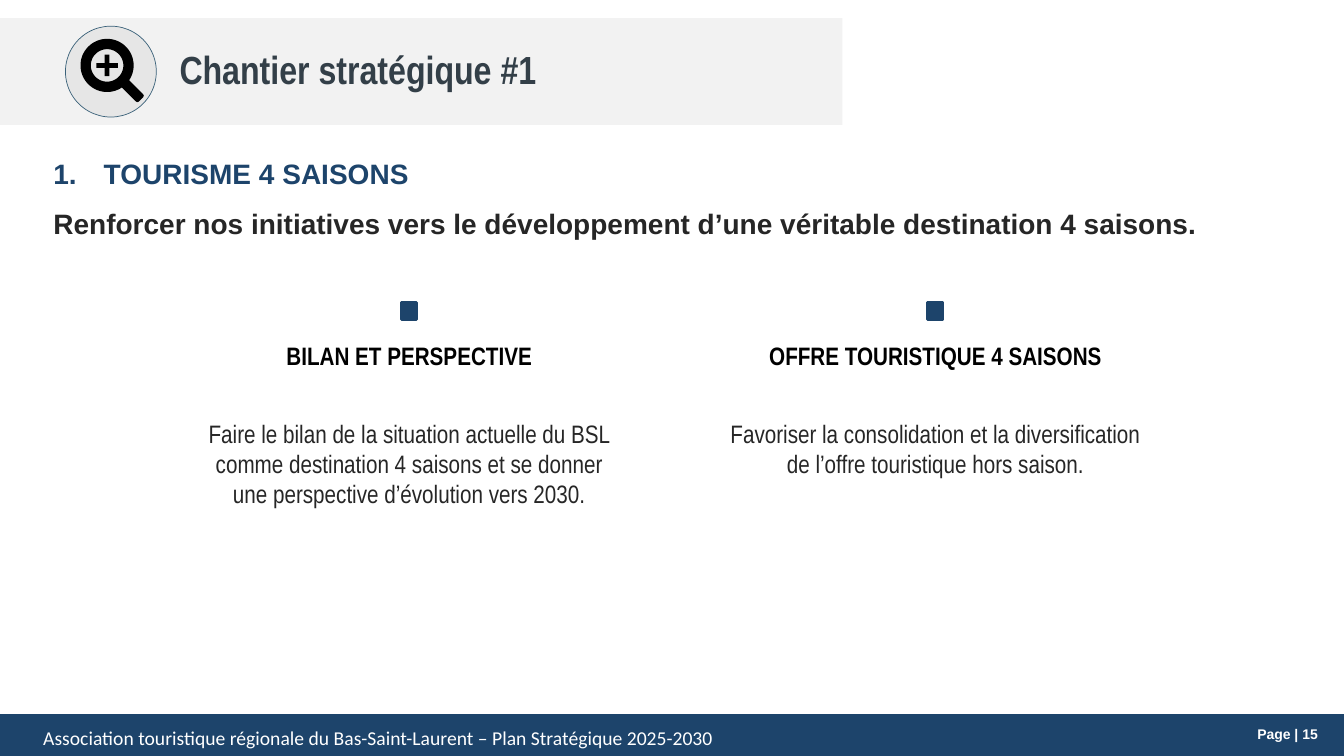
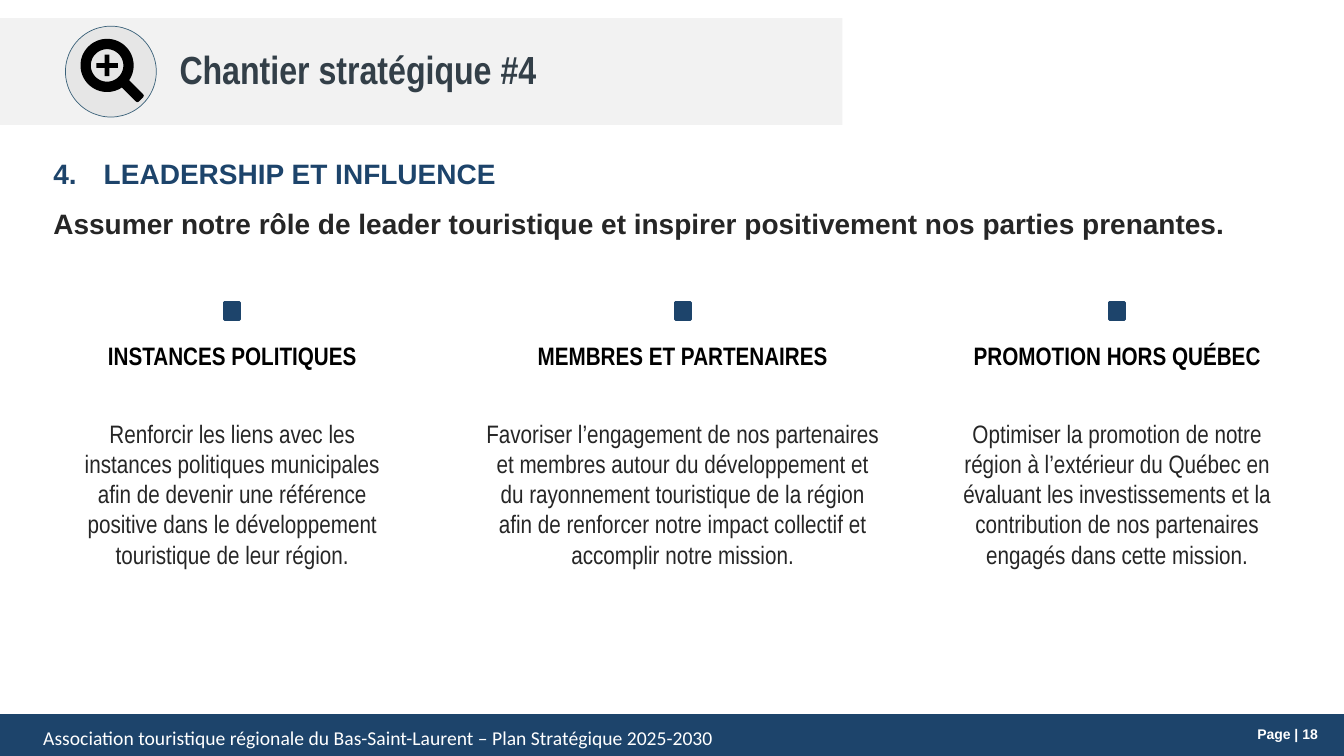
import dataclasses
import math

import lxml.etree
import pptx
import pptx.dml.color
import pptx.enum.shapes
import pptx.enum.text
import pptx.oxml.ns
import pptx.util

Cm = pptx.util.Cm
Pt = pptx.util.Pt
ALIGN = pptx.enum.text.PP_ALIGN
ANCHOR = pptx.enum.text.MSO_ANCHOR
SHAPE = pptx.enum.shapes.MSO_SHAPE


@dataclasses.dataclass(frozen=True)
class TextStyle:
    font: str
    size: float
    color: str
    bold: bool = False


@dataclasses.dataclass(frozen=True)
class Theme:
    navy: str = "1D446B"
    band: str = "F2F2F2"
    disc: str = "E6E6E6"
    disc_line: str = "3A6179"
    icon: str = "000000"
    title: TextStyle = TextStyle("Arial Narrow", 28, "333F48", True)
    topic: TextStyle = TextStyle("Arial", 20, "1D446B", True)
    statement: TextStyle = TextStyle("Arial", 20, "262626", True)
    heading: TextStyle = TextStyle("Arial Narrow", 18, "000000", True)
    detail: TextStyle = TextStyle("Arial Narrow", 18, "262626")
    footer: TextStyle = TextStyle("Calibri", 14, "FFFFFF")
    page_number: TextStyle = TextStyle("Arial", 10, "FFFFFF", True)


THEME = Theme()
PAGE_WIDTH, PAGE_HEIGHT = 33.87, 19.05
FOOTER = "Association touristique régionale du Bas-Saint-Laurent – Plan Stratégique 2025-2030"

# Each column: left and width in centimetres, heading, detail.
CHANTIERS = [
    dict(
        number=1,
        page_number=15,
        topic="TOURISME 4 SAISONS",
        statement="Renforcer nos initiatives vers le développement d’une véritable destination 4 saisons.",
        columns=[
            (4.88, 10.87, "BILAN ET PERSPECTIVE",
             "Faire le bilan de la situation actuelle du BSL comme destination 4 saisons "
             "et se donner une perspective d’évolution vers 2030."),
            (17.91, 11.33, "OFFRE TOURISTIQUE 4 SAISONS",
             "Favoriser la consolidation et la diversification de l’offre touristique hors saison."),
        ],
    ),
    dict(
        number=4,
        page_number=18,
        topic="LEADERSHIP ET INFLUENCE",
        statement="Assumer notre rôle de leader touristique et inspirer positivement nos parties prenantes.",
        columns=[
            (1.65, 8.41, "INSTANCES POLITIQUES",
             "Renforcir les liens avec les instances politiques municipales afin de devenir "
             "une référence positive dans le développement touristique de leur région."),
            (11.91, 10.59, "MEMBRES ET PARTENAIRES",
             "Favoriser l’engagement de nos partenaires et membres autour du développement "
             "et du rayonnement touristique de la région afin de renforcer notre impact "
             "collectif et accomplir notre mission."),
            (23.95, 8.41, "PROMOTION HORS QUÉBEC",
             "Optimiser la promotion de notre région à l’extérieur du Québec en évaluant "
             "les investissements et la contribution de nos partenaires engagés dans cette mission."),
        ],
    ),
]


def rgb(color):
    return pptx.dml.color.RGBColor.from_string(color)


def paint(shape, fill, line=None, weight=0):
    shape.shadow.inherit = False
    shape.fill.solid()
    shape.fill.fore_color.rgb = rgb(fill)
    if line:
        shape.line.color.rgb = rgb(line)
        shape.line.width = Pt(weight)
    else:
        shape.line.fill.background()


def add_block(page, kind, left, top, width, height, fill, line=None, weight=0):
    block = page.shapes.add_shape(kind, Cm(left), Cm(top), Cm(width), Cm(height))
    paint(block, fill, line, weight)


def place(box, left, top, width, height, anchor=ANCHOR.TOP):
    """Position a text holder and return its wrapped, fixed-size frame."""
    box.left, box.top, box.width, box.height = Cm(left), Cm(top), Cm(width), Cm(height)
    frame = box.text_frame
    frame.word_wrap = True
    frame.auto_size = pptx.enum.text.MSO_AUTO_SIZE.NONE
    frame.vertical_anchor = anchor
    return frame


def add_box(page, left, top, width, height):
    return place(page.shapes.add_textbox(0, 0, 0, 0), left, top, width, height)


def write(para, text, style, align=ALIGN.LEFT, before=0, after=0):
    para.alignment = align
    para.space_before, para.space_after = Pt(before), Pt(after)
    span = para.add_run()
    span.text = text
    span.font.name = style.font
    span.font.size = Pt(style.size)
    span.font.bold = style.bold
    span.font.color.rgb = rgb(style.color)


def set_bullet(para, hanging, tag, **attributes):
    properties = para._p.get_or_add_pPr()
    properties.set("marL", str(Cm(hanging)))
    properties.set("indent", str(-Cm(hanging)))
    lxml.etree.SubElement(properties, pptx.oxml.ns.qn(tag), attributes)


def arc(radius, start, end, steps=60):
    angles = [math.radians(start + (end - start) * step / steps) for step in range(steps + 1)]
    return [(radius * math.cos(angle), radius * math.sin(angle)) for angle in angles]


def add_magnifier(page, center_x, center_y):
    """Ring, handle and plus sign as one outline with a hole."""
    outer, inner, grip, arm, bar = 0.67, 0.41, 0.13, 0.27, 0.06
    joint = math.degrees(math.asin(grip / outer))
    half_tip = [(1.14, grip), (1.19, 0.12), (1.21, 0.08)]
    tip = [(x, -y) for x, y in half_tip] + half_tip[::-1]
    turn = math.sqrt(0.5)
    handle = [((x - y) * turn, (x + y) * turn) for x, y in tip]
    rim = arc(outer, 45 + joint, 405 - joint)
    corner = [(arm, -bar), (arm, bar), (bar, bar)]
    plus = []
    for _ in range(4):
        plus += corner
        corner = [(-y, x) for x, y in corner]
    contours = [
        [(Cm(center_x + x), Cm(center_y + y)) for x, y in outline]
        for outline in (rim + handle, arc(inner, 360, 0), plus)
    ]
    builder = page.shapes.build_freeform(*contours[0][0])
    builder.add_line_segments(contours[0][1:])
    for contour in contours[1:]:
        builder.move_to(*contour[0])
        builder.add_line_segments(contour[1:])
    paint(builder.convert_to_shape(), THEME.icon)


def add_footer(page, page_number):
    add_block(page, SHAPE.RECTANGLE, 0, 18.03, PAGE_WIDTH, 1.02, THEME.navy, THEME.navy, 2)
    label = add_box(page, 31.17, 18.16, 2.29, 0.69)
    write(label.paragraphs[0], f"Page | {page_number}", THEME.page_number, ALIGN.RIGHT)
    footer = add_box(page, 0.84, 18.16, 27.36, 0.86)
    write(footer.paragraphs[0], FOOTER, THEME.footer)


def add_header(page, title):
    add_block(page, SHAPE.RECTANGLE, 0, 0.46, 21.23, 2.69, THEME.band)
    add_block(page, SHAPE.OVAL, 1.65, 0.66, 2.29, 2.29, THEME.disc, THEME.disc_line, 0.5)
    add_magnifier(page, 2.7, 1.65)
    holder = page.shapes.title
    frame = place(holder, 4.27, 1.02, 15.27, 1.45, ANCHOR.MIDDLE)
    write(frame.paragraphs[0], title, THEME.title)
    # Bring the title in front of the band.
    page.shapes._spTree.append(holder._element)


def add_statement(page, number, topic, statement):
    frame = place(page.placeholders[1], 1.09, 3.81, 31.65, 2.39)
    para = frame.paragraphs[0]
    set_bullet(para, 1.27, "a:buAutoNum", type="arabicPeriod", startAt=str(number))
    write(para, topic, THEME.topic, after=12)
    para = frame.add_paragraph()
    set_bullet(para, 0, "a:buNone")
    write(para, statement, THEME.statement)


def add_column(page, left, width, heading, detail):
    marker_width = 0.38
    add_block(page, SHAPE.RECTANGLE, left + (width - marker_width) / 2, 7.62,
              marker_width, 0.43, THEME.navy, THEME.navy, 2)
    frame = add_box(page, left, 8.46, width, 6.07)
    write(frame.paragraphs[0], heading, THEME.heading, ALIGN.CENTER)
    write(frame.add_paragraph(), detail, THEME.detail, ALIGN.CENTER, before=33.6)


def add_chantier(deck, number, page_number, topic, statement, columns):
    page = deck.slides.add_slide(deck.slide_layouts.get_by_name("Title and Content"))
    add_footer(page, page_number)
    add_header(page, f"Chantier stratégique #{number}")
    add_statement(page, number, topic, statement)
    for column in columns:
        add_column(page, *column)


def main():
    deck = pptx.Presentation()
    deck.slide_width, deck.slide_height = Cm(PAGE_WIDTH), Cm(PAGE_HEIGHT)
    for chantier in CHANTIERS:
        add_chantier(deck, **chantier)
    deck.save("out.pptx")


if __name__ == "__main__":
    main()
